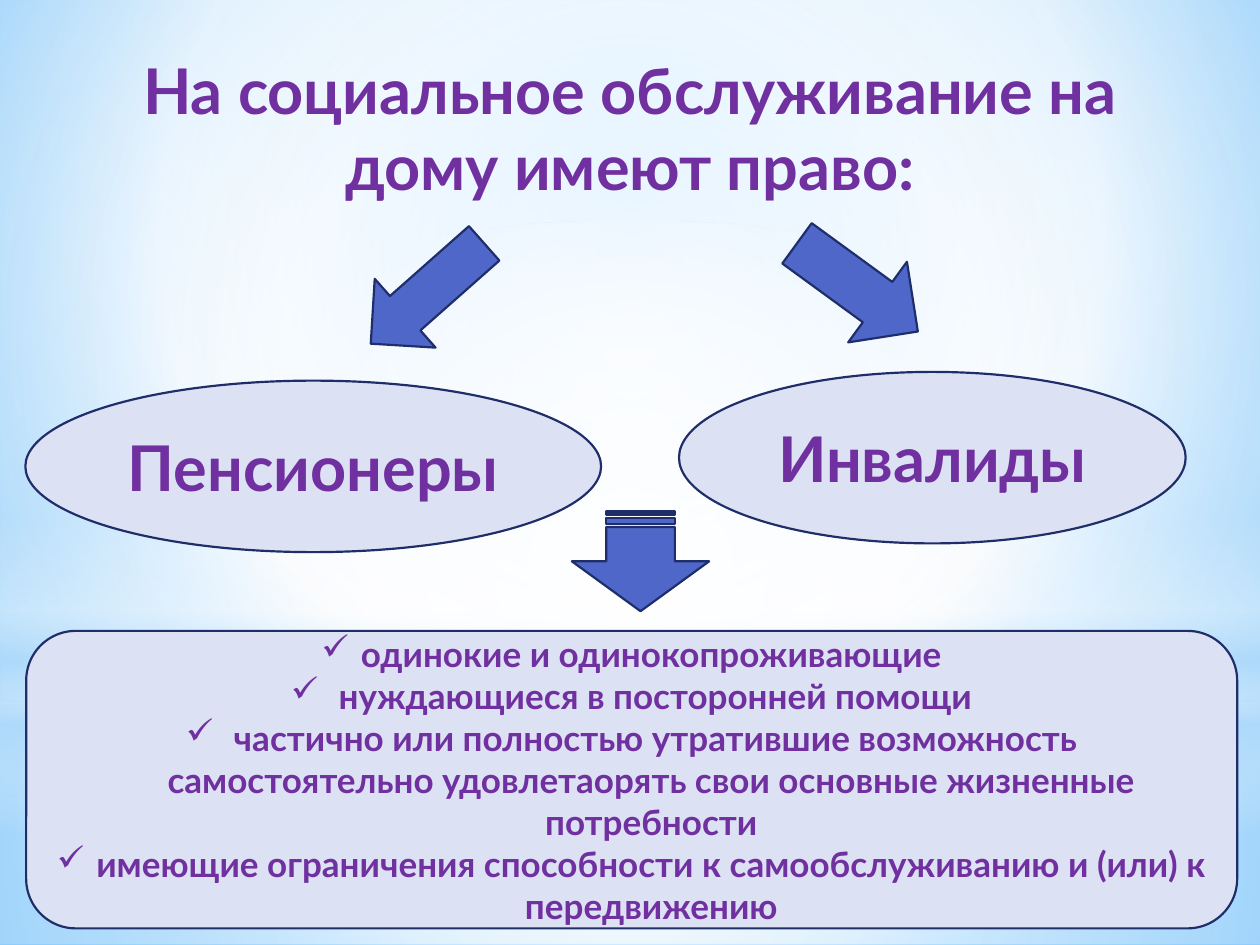
from lxml import etree
from pptx import Presentation
from pptx import util as u
from pptx.dml.color import RGBColor
from pptx.enum import shapes, text
from pptx.oxml.ns import qn

W, H = 720, 540
PURPLE, PALE, BLUE, NAVY = "7030A0", "DCE1F4", "4E67C8", "1F2E69"
FONT = {"name": "Lato", "bold": True}
MS = shapes.MSO_SHAPE


def color(h):
    return RGBColor.from_string(h)


def gradient(fill, parent, stops, to=None):
    """Stops are (position, colour, opacity) in percent; to is the focus rectangle."""
    fill.gradient()
    grad = next(parent.iter(qn("a:gradFill")))
    for child in list(grad):
        grad.remove(child)
    gs_list = etree.SubElement(grad, qn("a:gsLst"))
    for pos, rgb, opacity in stops:
        gs = etree.SubElement(gs_list, qn("a:gs"), pos=str(pos * 1000))
        clr = etree.SubElement(gs, qn("a:srgbClr"), val=rgb)
        if opacity < 100:
            etree.SubElement(clr, qn("a:alpha"), val=str(opacity * 1000))
    if to:
        focus = etree.SubElement(grad, qn("a:path"), {"path": "circle"})
        etree.SubElement(focus, qn("a:fillToRect"),
                         {k: str(v * 1000) for k, v in zip("ltrb", to)})
    else:
        etree.SubElement(grad, qn("a:lin"), ang="5400000", scaled="0")


prs = Presentation()
prs.slide_width, prs.slide_height = u.Pt(W), u.Pt(H)
s = prs.slides.add_slide(prs.slide_layouts[6])

# Background and its soft light layers
gradient(s.background.fill, s._element,
         [(0, "9ED5FF", 100), (60, "FFFFFF", 100), (100, "5BB9FF", 100)],
         (20, 10, 20, 60))
CENTER = (50, 50, 50, 50)
layers = [
    (MS.RECTANGLE, 402, 138, CENTER,
     [(0, "FFFFFF", 91), (37, "FFFFFF", 76), (100, "B4DCFA", 79)]),
    (MS.RECTANGLE, 0, 402, CENTER,
     [(0, "FFFFFF", 89), (48, "FFFFFF", 62), (100, "B4DCFA", 79)]),
    (MS.RECTANGLE, 297, 180, None,
     [(0, "FFFFFF", 0), (29, "FFFFFF", 30), (45, "B4DCFA", 40),
      (55, "FFFFFF", 26), (65, "B4DCFA", 60), (100, "FFFFFF", 0)]),
    (MS.OVAL, 126, 402, CENTER, [(0, "FFFFFF", 100), (56, "FFFFFF", 0)]),
]
for kind, top, height, to, stops in layers:
    sp = s.shapes.add_shape(kind, 0, u.Pt(top), u.Pt(W), u.Pt(height))
    sp.shadow.inherit = False
    sp.line.fill.background()
    gradient(sp.fill, sp._element, stops, to)

# Title, ellipses, arrows and list box: kind, place, rotation, fill, size, lines
items = [
    (None, (42.5, 26, 635, 90), 0, None, 36,
     ["На социальное обслуживание на дому имеют право:"]),
    (MS.OVAL, (388, 212.5, 289.5, 98), 0, PALE, 36, ["Инвалиды"]),
    (MS.OVAL, (14.5, 217.5, 329, 98), 0, PALE, 36, ["Пенсионеры"]),
    (MS.DOWN_ARROW, (218, 124.5, 52.5, 86.5), 48.5, BLUE, 0, []),
    (MS.DOWN_ARROW, (461.5, 121.5, 57, 85.5), 306.1, BLUE, 0, []),
    (MS.STRIPED_RIGHT_ARROW, (337.5, 281.5, 57, 78.5), 90, BLUE, 0, []),
    (MS.ROUNDED_RECTANGLE, (15, 360.5, 692, 170), 0, PALE, 20, [
        "одинокие и одинокопроживающие",
        " нуждающиеся в посторонней помощи",
        " частично или полностью утратившие возможность самостоятельно "
        "удовлетаорять свои основные жизненные потребности",
        "имеющие ограничения способности к самообслуживанию и (или) к передвижению",
    ]),
]
for kind, place, rotation, fill, size, lines in items:
    box = [u.Pt(v) for v in place]
    if kind is None:
        sp = s.shapes.add_textbox(*box)
    else:
        sp = s.shapes.add_shape(kind, *box)
        sp.shadow.inherit = False
        sp.rotation = rotation
        sp.fill.solid()
        sp.fill.fore_color.rgb = color(fill)
        sp.line.color.rgb = color(NAVY)
        sp.line.width = u.Pt(1.25)
    tf = sp.text_frame
    tf.word_wrap = True
    tf.vertical_anchor = text.MSO_ANCHOR.MIDDLE if kind else text.MSO_ANCHOR.TOP
    for i, line in enumerate(lines):
        p = tf.add_paragraph() if i else tf.paragraphs[0]
        p.alignment = text.PP_ALIGN.CENTER
        r = p.add_run()
        r.text = line
        for name, value in {**FONT, "size": u.Pt(size)}.items():
            setattr(r.font, name, value)
        r.font.color.rgb = color(PURPLE)
        # Check-mark bullets for the list
        if len(lines) > 1:
            pPr = p._p.get_or_add_pPr()
            pPr.set("marL", str(u.Pt(22.5)))
            pPr.set("indent", str(-u.Pt(22.5)))
            etree.SubElement(pPr, qn("a:buChar"), char="✓")

prs.save("out.pptx")
